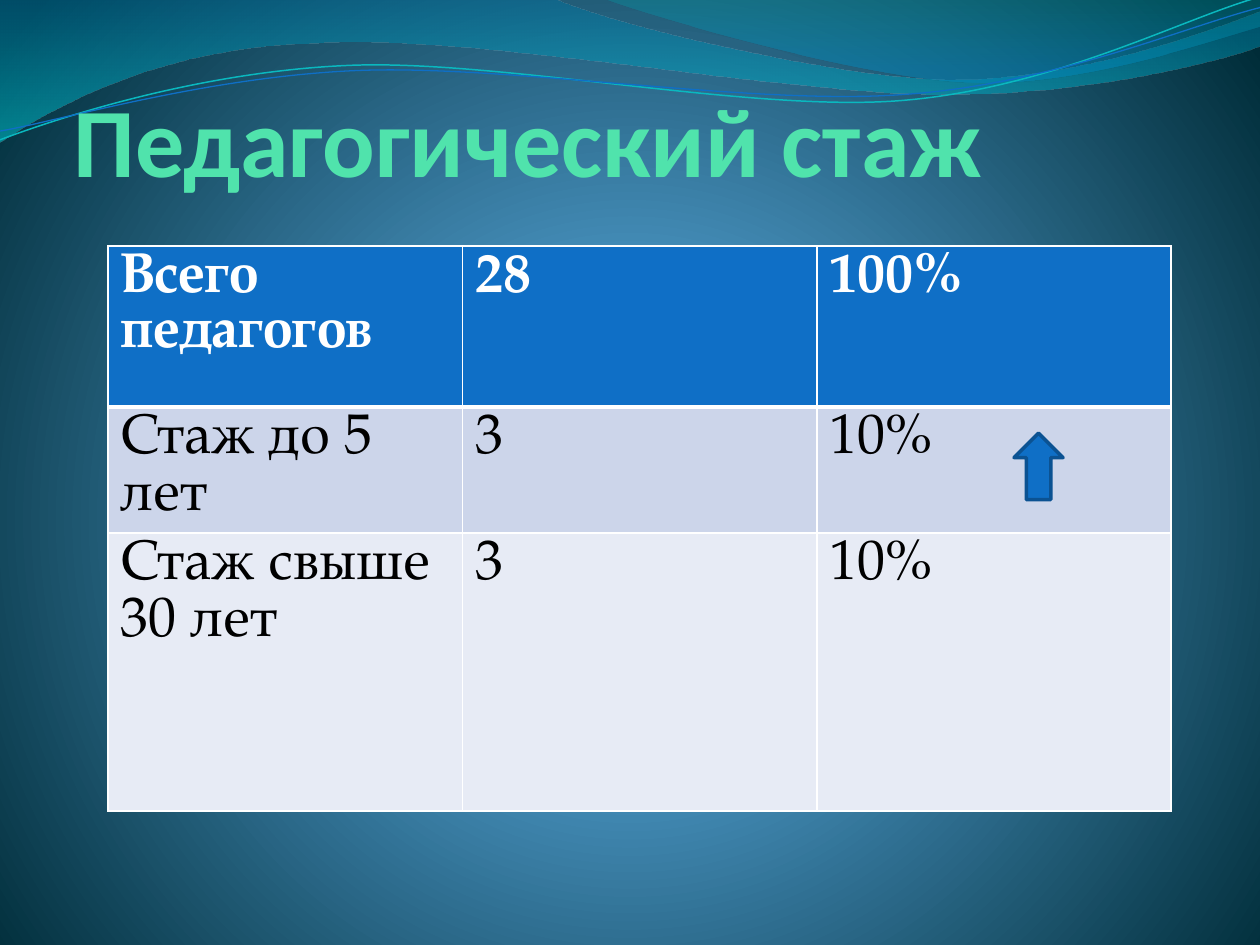
from lxml.etree import SubElement
from pptx import Presentation
from pptx.dml.color import RGBColor
from pptx.enum.shapes import MSO_SHAPE
from pptx.enum.text import MSO_ANCHOR, MSO_AUTO_SIZE, PP_ALIGN
from pptx.oxml.ns import qn
from pptx.util import Pt

TITLE = "Педагогический стаж"
ROWS = [
    ("Всего педагогов", "28", "100%"),
    ("Стаж до 5 лет", "3", "10%"),
    ("Стаж свыше 30 лет", "3", "10%"),
]
ROW_HEIGHTS = (92, 72, 159)
COLUMN_WIDTH = 202.5
TABLE_LEFT, TABLE_TOP = 61.8, 140.5

THEME = {
    "title_font": "Calibri", "title_size": 56, "title_color": "50E3AC",
    "table_font": "TeX Gyre Pagella", "table_size": 32,
    "header_text": "FFFFFF", "body_text": "000000", "border": "FFFFFF",
    "row_fills": ("0F6FC6", "CCD5EA", "E7EBF5"),
    "arrow_fill": "0F6FC6", "arrow_line": "0B5292",
    "background": [(0, "4AA0D6", 100), (25, "4C98C7", 100), (100, "002C38", 100)],
}

# Two numbers are a straight step, six are a cubic curve.
BANDS = [
    ([(0, 0), (316.8, -0.7), (342.7, 12.2, 478.1, 45.4, 545.8, 45.4),
      (614.2, 45.4, 689.8, 18.7, 720, 6.5), (720.7, 25.9),
      (707.8, 31.7, 626.4, 54.7, 537.1, 54), (447.8, 54, 275, 20.2, 185, 24.5),
      (92.9, 25.9, 33.1, 59.8, -0.7, 81.4), (0, 0)],
     [(0, "0074A1", 45), (100, "00C6CF", 55)]),
    ([(344.9, -0.7), (366.5, 7.9, 491, 44.6, 553.7, 46.8),
      (616.3, 49.7, 691.9, 23, 720, 15.1), (720, 0), (344.9, -0.7)],
     [(0, "00A1A9", 30), (80, "008BBF", 45)]),
]
STRANDS = [
    ([(0, 79.9), (34.6, 67, 113.8, 41, 199.4, 37.4),
      (284.4, 33.8, 427, 64.1, 513.4, 57.6),
      (599.8, 51.1, 675.4, 10.8, 718.6, -1.4)], "0AB8BF", 0.85),
    ([(0, 74.9), (33.8, 69.1, 118.1, 43.9, 203.8, 40.3),
      (290.2, 36.7, 429.8, 60.5, 516.2, 54),
      (601.9, 48.2, 677.5, 15.1, 720, 4.3)], "0F6FC6", 0.75),
]


def color(value):
    return RGBColor.from_string(value)


def add_outline(page, steps, close):
    anchors = [(Pt(step[-2]), Pt(step[-1])) for step in steps]
    builder = page.shapes.build_freeform(*anchors[0])
    builder.add_line_segments(anchors[1:], close=close)
    shape = builder.convert_to_shape()
    shape.shadow.inherit = False
    segments = shape._element.xpath(".//a:lnTo")
    for segment, step in zip(segments, steps[1:]):
        if len(step) == 6:
            segment.getparent().replace(segment, make_curve(shape, step))
    return shape


def make_curve(shape, step):
    curve = shape._element.makeelement(qn("a:cubicBezTo"), {})
    for x, y in zip(step[::2], step[1::2]):
        SubElement(curve, qn("a:pt"), x=str(Pt(x) - shape.left), y=str(Pt(y) - shape.top))
    return curve


def set_gradient(owner, fill, stops, radial=False):
    fill.gradient()
    gradient = owner.xpath(".//a:gradFill")[0]
    for child in list(gradient):
        gradient.remove(child)
    stop_list = SubElement(gradient, qn("a:gsLst"))
    for position, value, opacity in stops:
        stop = SubElement(stop_list, qn("a:gs"), pos=str(position * 1000))
        tint = SubElement(stop, qn("a:srgbClr"), val=value)
        SubElement(tint, qn("a:alpha"), val=str(opacity * 1000))
    if radial:
        path = SubElement(gradient, qn("a:path"), path="circle")
        SubElement(path, qn("a:fillToRect"), l="10000", t="110000", r="10000", b="100000")
    else:
        SubElement(gradient, qn("a:lin"), ang="5400000", scaled="0")


def set_borders(cell, widths):
    properties = cell._tc.get_or_add_tcPr()
    for index, (side, width) in enumerate(widths.items()):
        line = properties.makeelement(qn("a:" + side), {"w": str(Pt(width))})
        solid = SubElement(line, qn("a:solidFill"))
        SubElement(solid, qn("a:srgbClr"), val=THEME["border"])
        properties.insert(index, line)


def add_waves(page):
    for steps, stops in BANDS:
        band = add_outline(page, steps, True)
        set_gradient(band._element, band.fill, stops)
        band.line.fill.background()
    for steps, value, width in STRANDS:
        strand = add_outline(page, steps, False)
        strand.fill.background()
        strand.line.color.rgb = color(value)
        strand.line.width = Pt(width)


def add_title(page):
    title = page.shapes.title
    page.shapes._spTree.append(title._element)
    title.left, title.top, title.width, title.height = Pt(42), Pt(22.5), Pt(612), Pt(90)
    frame = title.text_frame
    frame.text = TITLE
    frame.auto_size = MSO_AUTO_SIZE.NONE
    frame.vertical_anchor = MSO_ANCHOR.BOTTOM
    frame.margin_left = frame.margin_top = frame.margin_right = frame.margin_bottom = 0
    paragraph = frame.paragraphs[0]
    paragraph.alignment = PP_ALIGN.LEFT
    paragraph.font.name = THEME["title_font"]
    paragraph.font.size = Pt(THEME["title_size"])
    paragraph.font.bold = True
    paragraph.font.color.rgb = color(THEME["title_color"])


def add_experience_table(page):
    columns = len(ROWS[0])
    table = page.shapes.add_table(
        len(ROWS), columns, Pt(TABLE_LEFT), Pt(TABLE_TOP),
        Pt(COLUMN_WIDTH * columns), Pt(sum(ROW_HEIGHTS))).table
    for row_index, texts in enumerate(ROWS):
        header = row_index == 0
        table.rows[row_index].height = Pt(ROW_HEIGHTS[row_index])
        for column_index, text in enumerate(texts):
            cell = table.cell(row_index, column_index)
            cell.text = text
            cell.fill.solid()
            cell.fill.fore_color.rgb = color(THEME["row_fills"][row_index])
            set_borders(cell, {"lnL": 1, "lnR": 1, "lnT": 3 if row_index == 1 else 1,
                               "lnB": 3 if header else 1})
            font = cell.text_frame.paragraphs[0].font
            font.name = THEME["table_font"]
            font.size = Pt(THEME["table_size"])
            font.bold = header
            font.color.rgb = color(THEME["header_text" if header else "body_text"])


def add_growth_arrow(page):
    arrow = page.shapes.add_shape(MSO_SHAPE.UP_ARROW, Pt(579.5), Pt(247.5), Pt(28), Pt(38))
    arrow.shadow.inherit = False
    arrow.fill.solid()
    arrow.fill.fore_color.rgb = color(THEME["arrow_fill"])
    arrow.line.color.rgb = color(THEME["arrow_line"])
    arrow.line.width = Pt(2)


def main():
    deck = Presentation()
    deck.slide_width, deck.slide_height = Pt(720), Pt(540)
    page = deck.slides.add_slide(deck.slide_layouts[5])
    set_gradient(page._element, page.background.fill, THEME["background"], radial=True)
    add_waves(page)
    add_title(page)
    add_experience_table(page)
    add_growth_arrow(page)
    deck.save("out.pptx")


if __name__ == "__main__":
    main()
